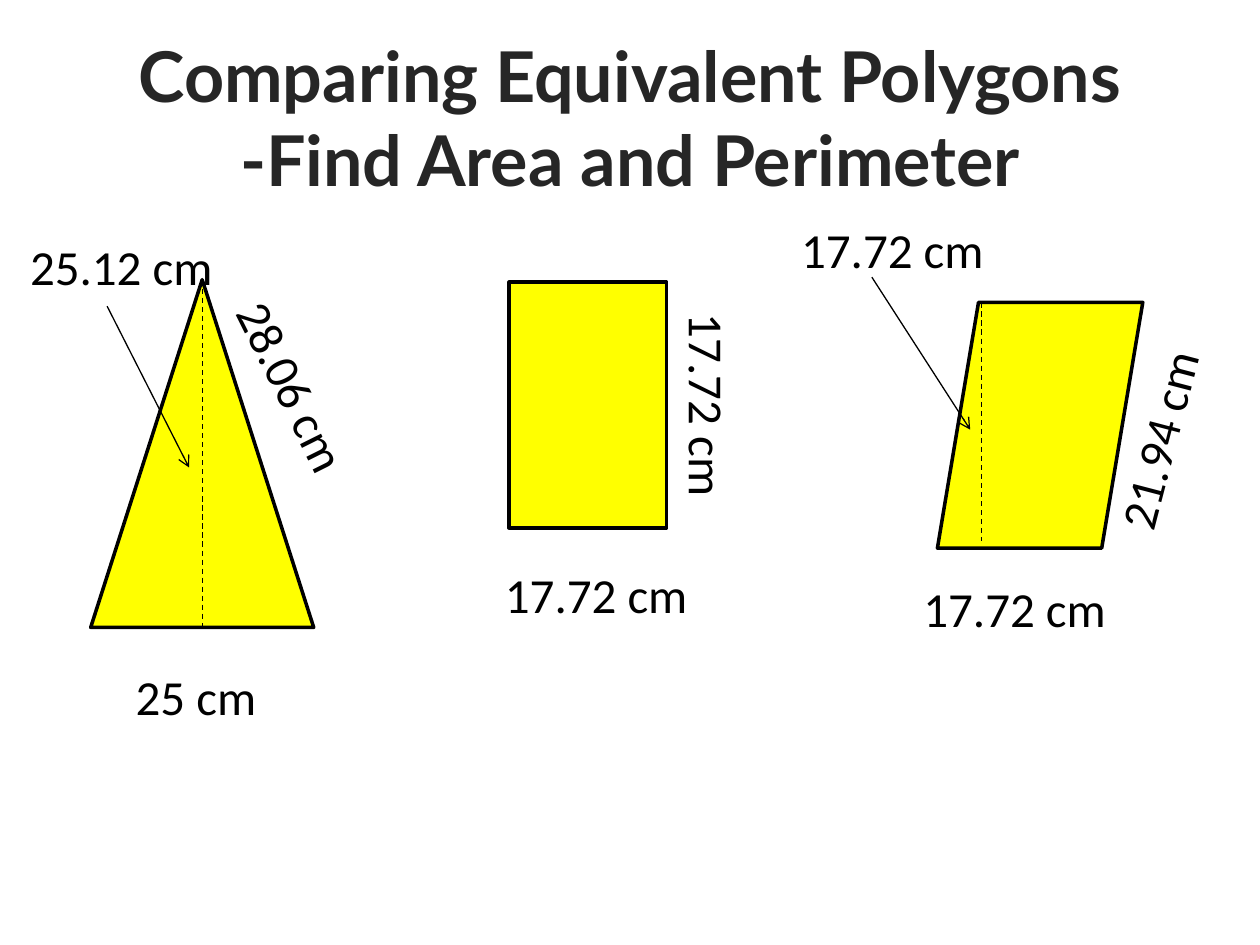
import dataclasses

import lxml.etree
import pptx
import pptx.dml.color
import pptx.enum.dml
import pptx.enum.shapes
import pptx.enum.text
import pptx.oxml.ns
import pptx.util

Inches = pptx.util.Inches
Pt = pptx.util.Pt
RGBColor = pptx.dml.color.RGBColor
Shape = pptx.enum.shapes.MSO_SHAPE
Align = pptx.enum.text.PP_ALIGN
qn = pptx.oxml.ns.qn


@dataclasses.dataclass(frozen=True)
class Theme:
    title_font: str = "Lato"
    label_font: str = "Calibri"
    title_size: int = Pt(40)
    label_size: int = Pt(28)
    outline_width: int = Pt(2)
    line_width: int = Pt(0.75)
    title_color: RGBColor = RGBColor(0x26, 0x26, 0x26)
    ink: RGBColor = RGBColor(0, 0, 0)
    polygon_fill: RGBColor = RGBColor(0xFF, 0xFF, 0)


THEME = Theme()


def add_title(page, text, left, top, width, height):
    title = page.shapes.title
    title.left, title.top, title.width, title.height = left, top, width, height
    frame = title.text_frame
    frame.text = text
    frame.auto_size = pptx.enum.text.MSO_AUTO_SIZE.NONE
    frame.vertical_anchor = pptx.enum.text.MSO_ANCHOR.MIDDLE
    para = frame.paragraphs[0]
    para.alignment = Align.CENTER
    para.font.name = THEME.title_font
    para.font.size = THEME.title_size
    para.font.bold = True
    para.font.color.rgb = THEME.title_color


def add_polygon(page, kind, left, top, width, height):
    polygon = page.shapes.add_shape(kind, left, top, width, height)
    polygon.shadow.inherit = False
    polygon.fill.solid()
    polygon.fill.fore_color.rgb = THEME.polygon_fill
    polygon.line.color.rgb = THEME.ink
    polygon.line.width = THEME.outline_width


def add_label(page, text, left, top, width, height, rotation=0, align=Align.LEFT):
    box = page.shapes.add_textbox(left, top, width, height)
    box.rotation = rotation
    box.text_frame.word_wrap = True
    para = box.text_frame.paragraphs[0]
    para.text = text
    para.alignment = align
    para.line_spacing = 1.15
    para.space_after = Pt(10)
    para.font.name = THEME.label_font
    para.font.size = THEME.label_size
    para.font.color.rgb = THEME.ink


def add_line(page, start_x, start_y, end_x, end_y):
    line = page.shapes.add_connector(
        pptx.enum.shapes.MSO_CONNECTOR.STRAIGHT, start_x, start_y, end_x, end_y)
    line.line.color.rgb = THEME.ink
    line.line.width = THEME.line_width
    lxml.etree.SubElement(line.element.spPr, qn("a:effectLst"))
    return line


def add_height_line(page, x, top, bottom):
    line = add_line(page, x, top, x, bottom)
    line.line.dash_style = pptx.enum.dml.MSO_LINE.DASH


def add_pointer(page, start_x, start_y, end_x, end_y):
    """Draw an arrow from a height label to its dashed line."""
    line = add_line(page, start_x, start_y, end_x, end_y)
    outline = line.element.spPr.find(qn("a:ln"))
    lxml.etree.SubElement(outline, qn("a:tailEnd"), type="arrow")


def add_triangle(page, left, top, width, height):
    add_polygon(page, Shape.ISOSCELES_TRIANGLE, left, top, width, height)
    add_label(page, "25 cm", left - Inches(0.09), top + height + Inches(0.19),
              Inches(1.85), Inches(0.73), align=Align.CENTER)
    add_label(page, "25.12 cm", left - Inches(0.58), top - Inches(0.46),
              Inches(1.76), Inches(0.96))
    add_height_line(page, left + width // 2, top, top + height)
    add_pointer(page, left + Inches(0.13), top + Inches(0.21),
                left + Inches(0.78), top + Inches(1.49))
    add_label(page, "28.06 cm", left + Inches(0.57), top + Inches(1),
              Inches(2.68), Inches(0.54), rotation=63.5)


def add_rectangle(page, left, top, width, height):
    add_polygon(page, Shape.RECTANGLE, left, top, width, height)
    add_label(page, "17.72 cm", left - Inches(0.13), top + height + Inches(0.17),
              Inches(2.06), Inches(1.11))
    add_label(page, "17.72 cm", left + Inches(0.44), top + Inches(0.65),
              Inches(2.34), Inches(0.65), rotation=90, align=Align.CENTER)


def add_parallelogram(page, left, top, width, height):
    add_polygon(page, Shape.FLOWCHART_DATA, left, top, width, height)
    add_height_line(page, left + Inches(0.35), top, top + height - Inches(0.06))
    add_pointer(page, left - Inches(0.52), top - Inches(0.2),
                left + Inches(0.26), top + Inches(1.01))
    add_label(page, "17.72 cm", left - Inches(1.18), top - Inches(0.78),
              Inches(1.71), Inches(0.72))
    add_label(page, "17.72 cm", left - Inches(0.21), top + height + Inches(0.12),
              Inches(1.92), Inches(0.96))
    add_label(page, "21.94 cm", left + Inches(0.67), top + Inches(0.29),
              Inches(2.48), Inches(0.82), rotation=284.6)


def main():
    deck = pptx.Presentation()
    deck.slide_width, deck.slide_height = Inches(10), Inches(7.5)
    page = deck.slides.add_slide(deck.slide_layouts.get_by_name("Title Only"))
    add_title(page, "Comparing Equivalent Polygons\v-Find Area and Perimeter",
              Inches(0.5), Inches(0.3), Inches(9), Inches(1.25))
    add_triangle(page, Inches(0.72), Inches(2.22), Inches(1.77), Inches(2.76))
    add_rectangle(page, Inches(4.04), Inches(2.24), Inches(1.25), Inches(1.95))
    add_parallelogram(page, Inches(7.44), Inches(2.4), Inches(1.63), Inches(1.95))
    deck.save("out.pptx")


if __name__ == "__main__":
    main()
